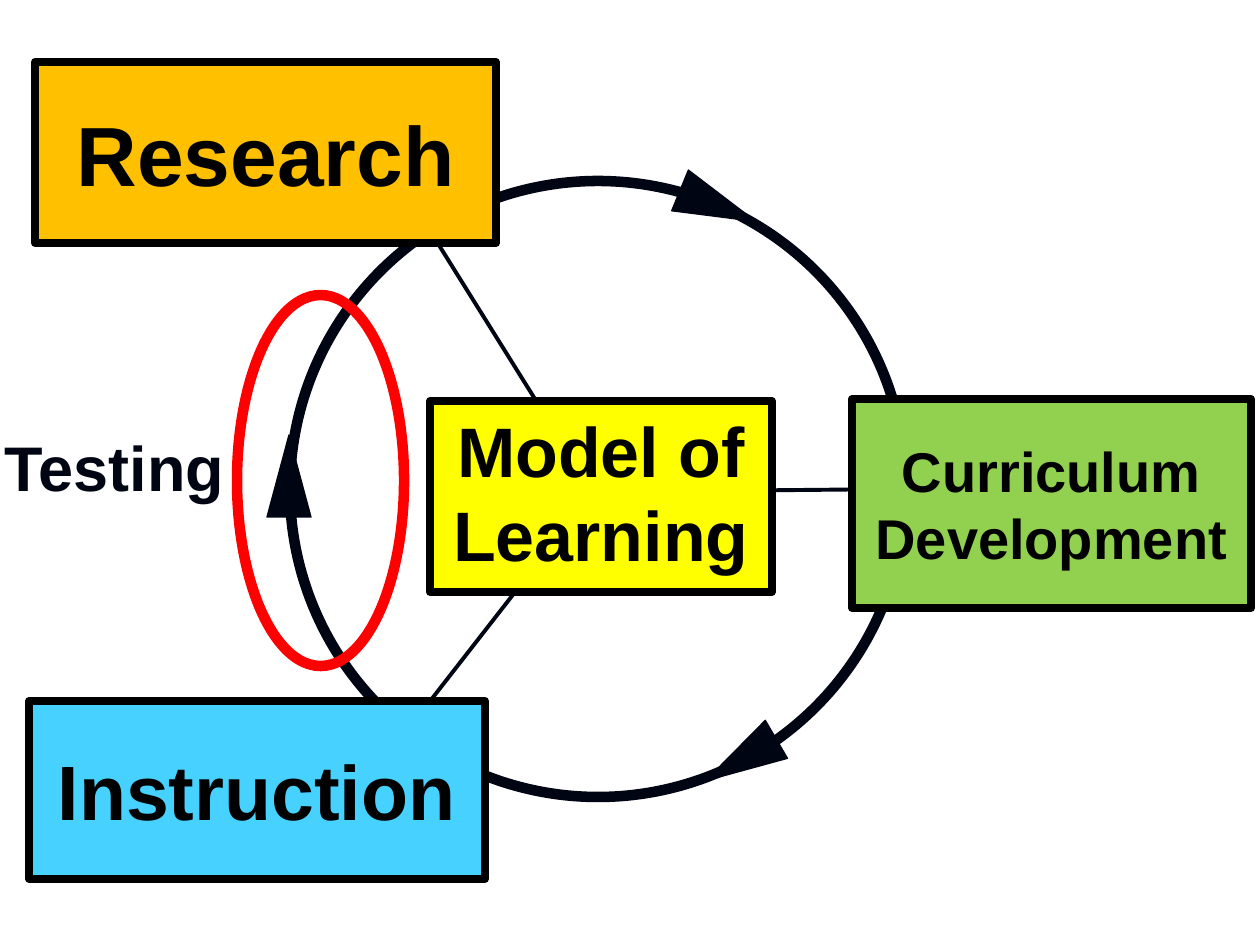
import pptx
import pptx.util
import pptx.dml.color
import pptx.enum.shapes
import pptx.enum.text
import pptx.oxml.ns
from lxml import etree

EMU_PER_PX = 914400 / 126
SHAPE = pptx.enum.shapes.MSO_SHAPE
ANCHOR = pptx.enum.text.MSO_ANCHOR
ALIGN = pptx.enum.text.PP_ALIGN
INK = "000514"
BLACK = "000000"


def px(*lengths):
    return [pptx.util.Emu(round(length * EMU_PER_PX)) for length in lengths]


def color(hex_code):
    return pptx.dml.color.RGBColor.from_string(hex_code)


def add_outline(slide, kind, bounds, line, width, fill=None, rotation=0):
    shape = slide.shapes.add_shape(kind, *px(*bounds))
    shape.shadow.inherit = False
    shape.rotation = rotation
    if fill:
        shape.fill.solid()
        shape.fill.fore_color.rgb = color(fill)
    else:
        shape.fill.background()
    shape.line.color.rgb = color(line)
    shape.line.width = pptx.util.Pt(width)
    return shape


def write(frame, text, size, text_color, align):
    frame.word_wrap = True
    label = frame.paragraphs[0]
    label.text = text
    label.alignment = align
    label.font.name = "Arial"
    label.font.size = pptx.util.Pt(size)
    label.font.bold = True
    label.font.color.rgb = color(text_color)


def add_stage(slide, text, bounds, fill, size, anchor=ANCHOR.MIDDLE):
    stage = add_outline(slide, SHAPE.RECTANGLE, bounds, BLACK, 4.5, fill)
    stage.text_frame.vertical_anchor = anchor
    write(stage.text_frame, text, size, BLACK, ALIGN.CENTER)


def add_spoke(slide, start, end):
    spoke = slide.shapes.add_connector(
        pptx.enum.shapes.MSO_CONNECTOR.STRAIGHT, *px(*start, *end))
    spoke.line.color.rgb = color(INK)
    spoke.line.width = pptx.util.Pt(2.25)
    etree.SubElement(spoke._element.spPr, pptx.oxml.ns.qn("a:effectLst"))


def add_caption(slide, text, bounds, size):
    caption = slide.shapes.add_textbox(*px(*bounds))
    caption.text_frame.margin_left = px(5)[0]
    write(caption.text_frame, text, size, INK, ALIGN.LEFT)


def main():
    deck = pptx.Presentation()
    deck.slide_width, deck.slide_height = px(1260, 945)
    slide = deck.slides.add_slide(deck.slide_layouts[6])
    slide.background.fill.solid()
    slide.background.fill.fore_color.rgb = color("FFFFFF")

    # Cycle with its direction markers
    add_outline(slide, SHAPE.OVAL, (290, 181, 616, 616), INK, 6)
    for left, top, rotation in ((267, 435, 0), (696, 165, 112.3), (719, 719, 239.7)):
        add_outline(slide, SHAPE.ISOSCELES_TRIANGLE, (left, top, 44, 82),
                    INK, 0.75, INK, rotation)

    # Spokes from the model to each stage
    hub = (593, 492)
    for stage_end in ((437, 242), (906, 489), (406, 732)):
        add_spoke(slide, hub, stage_end)

    # Stages and the model in the middle
    add_stage(slide, "Research", (35, 62, 461, 181), "FFC000", 48)
    add_stage(slide, "Curriculum Development", (852, 399, 399, 209), "92D050", 32)
    add_stage(slide, "Instruction", (29, 701, 456, 178), "47D1FF", 44)
    add_stage(slide, "Model of Learning", (430, 401, 342, 191), "FFFF00", 40,
              ANCHOR.TOP)

    # Testing highlight
    add_outline(slide, SHAPE.OVAL, (237, 295, 167, 371), "FF0000", 6)
    add_caption(slide, "Testing", (0, 422, 289, 89), 36)

    deck.save("out.pptx")


if __name__ == "__main__":
    main()
